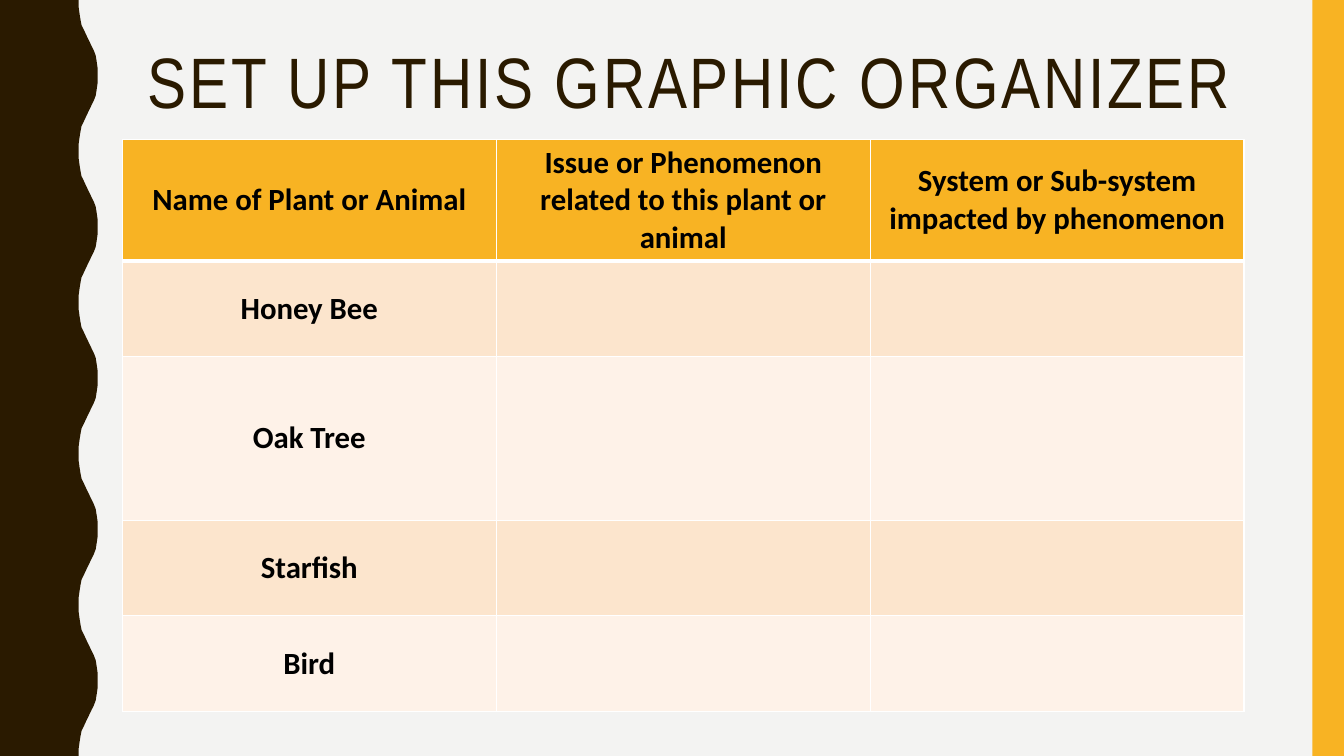
"""Build a slide with a graphic organizer about living things and systems."""
from dataclasses import dataclass

import lxml.etree
import pptx
import pptx.dml.color
import pptx.enum.text
import pptx.oxml.ns
import pptx.util

Pt = pptx.util.Pt
COLORS = {
    "background": "F3F3F2",
    "brown": "2A1A00",
    "gold": "F8B323",
    "peach": "FCE5CD",
    "cream": "FEF2E8",
    "white": "FFFFFF",
    "black": "000000",
}
SLIDE_WIDTH, SLIDE_HEIGHT = 960, 540
WAVE_PERIOD = 108
HALF_WAVE = [
    (56.2, 0), (56.2, 5), (56.9, 10), (57.6, 14.4), (58.3, 18),
    (59.8, 21), (61.2, 24), (62.6, 27), (64.1, 30), (65.5, 33),
    (67, 36), (68.4, 39.6), (69.1, 44), (69.8, 49), (69.8, 54),
]
COLUMN_WIDTH = 267.1


@dataclass
class OrganizerRow:
    """One row of the organizer."""
    texts: list[str]
    height: float
    fill: str
    top_line: float = 1
    bottom_line: float = 1


ORGANIZER = [
    OrganizerRow(["Name of Plant or Animal",
                  "Issue or Phenomenon related to this plant or animal",
                  "System or Sub-system impacted by phenomenon"],
                 87, "gold", bottom_line=3),
    OrganizerRow(["Honey Bee", "", ""], 68.1, "peach", top_line=3),
    OrganizerRow(["Oak Tree", "", ""], 117.3, "cream"),
    OrganizerRow(["Starfish", "", ""], 68.1, "peach"),
    OrganizerRow(["Bird", "", ""], 68.1, "cream"),
]


def rgb(name: str) -> pptx.dml.color.RGBColor:
    """Look up a named colour."""
    return pptx.dml.color.RGBColor.from_string(COLORS[name])


def paint(shape, color: str) -> None:
    """Give a shape a plain fill without line or shadow."""
    shape.shadow.inherit = False
    shape.fill.solid()
    shape.fill.fore_color.rgb = rgb(color)
    shape.line.fill.background()


def style_run(run, font: str, size: float, color: str, bold: bool = False) -> None:
    """Set the font of a run."""
    run.font.name = font
    run.font.size = Pt(size)
    run.font.color.rgb = rgb(color)
    run.font.bold = bold


def draw_wave(slide) -> None:
    """Draw the wavy band on the left edge."""
    period = HALF_WAVE + [(x, WAVE_PERIOD - y) for x, y in HALF_WAVE[-2::-1]]
    edge = [(Pt(x), Pt(y + top))
            for top in range(0, SLIDE_HEIGHT, WAVE_PERIOD) for x, y in period]
    builder = slide.shapes.build_freeform(0, 0)
    builder.add_line_segments(edge + [(0, Pt(SLIDE_HEIGHT))])
    paint(builder.convert_to_shape(), "brown")


def draw_stripe(slide) -> None:
    """Draw the gold stripe on the right edge."""
    left = 937.5
    stripe = slide.shapes.add_shape(
        pptx.enum.shapes.MSO_SHAPE.RECTANGLE,
        Pt(left), 0, Pt(SLIDE_WIDTH - left), Pt(SLIDE_HEIGHT))
    paint(stripe, "gold")


def draw_title(slide) -> None:
    """Write the slide title."""
    title = slide.shapes.add_textbox(Pt(98.6), Pt(30.2), Pt(801.4), Pt(117.4))
    title.text_frame.word_wrap = True
    title.text_frame.text = "SET UP THIS GRAPHIC ORGANIZER"
    heading = title.text_frame.paragraphs[0]
    heading.line_spacing = 0.9
    style_run(heading.runs[0], "Arial Narrow", 51, "brown")
    heading.runs[0].font._element.set("spc", "200")


def add_border(cell, side: str, width: float) -> None:
    """Add a white border to one side of a cell."""
    qn = pptx.oxml.ns.qn
    line = lxml.etree.SubElement(
        cell._tc.get_or_add_tcPr(), qn(f"a:ln{side}"), w=str(Pt(width)))
    fill = lxml.etree.SubElement(line, qn("a:solidFill"))
    lxml.etree.SubElement(fill, qn("a:srgbClr"), val=COLORS["white"])


def fill_cell(cell, text: str, row: OrganizerRow) -> None:
    """Write and format one cell."""
    sides = {"L": 1, "R": 1, "T": row.top_line, "B": row.bottom_line}
    for side, width in sides.items():
        add_border(cell, side, width)
    cell.fill.solid()
    cell.fill.fore_color.rgb = rgb(row.fill)
    cell.vertical_anchor = pptx.enum.text.MSO_ANCHOR.MIDDLE
    cell.text_frame.text = text
    paragraph = cell.text_frame.paragraphs[0]
    paragraph.alignment = pptx.enum.text.PP_ALIGN.CENTER
    for run in paragraph.runs:
        style_run(run, "Calibri", 22, "black", bold=True)


def draw_organizer(slide) -> None:
    """Draw the organizer table."""
    column_count = len(ORGANIZER[0].texts)
    table = slide.shapes.add_table(
        len(ORGANIZER), column_count, Pt(87.4), Pt(99.4),
        Pt(COLUMN_WIDTH * column_count),
        Pt(sum(row.height for row in ORGANIZER))).table
    for column in table.columns:
        column.width = Pt(COLUMN_WIDTH)
    for row_index, row in enumerate(ORGANIZER):
        table.rows[row_index].height = Pt(row.height)
        for column_index, text in enumerate(row.texts):
            fill_cell(table.cell(row_index, column_index), text, row)


def main() -> None:
    """Build and save the presentation."""
    presentation = pptx.Presentation()
    presentation.slide_width = Pt(SLIDE_WIDTH)
    presentation.slide_height = Pt(SLIDE_HEIGHT)
    slide = presentation.slides.add_slide(presentation.slide_layouts[6])
    slide.background.fill.solid()
    slide.background.fill.fore_color.rgb = rgb("background")
    draw_wave(slide)
    draw_stripe(slide)
    draw_title(slide)
    draw_organizer(slide)
    presentation.save("out.pptx")


if __name__ == "__main__":
    import pptx.enum.shapes
    main()
